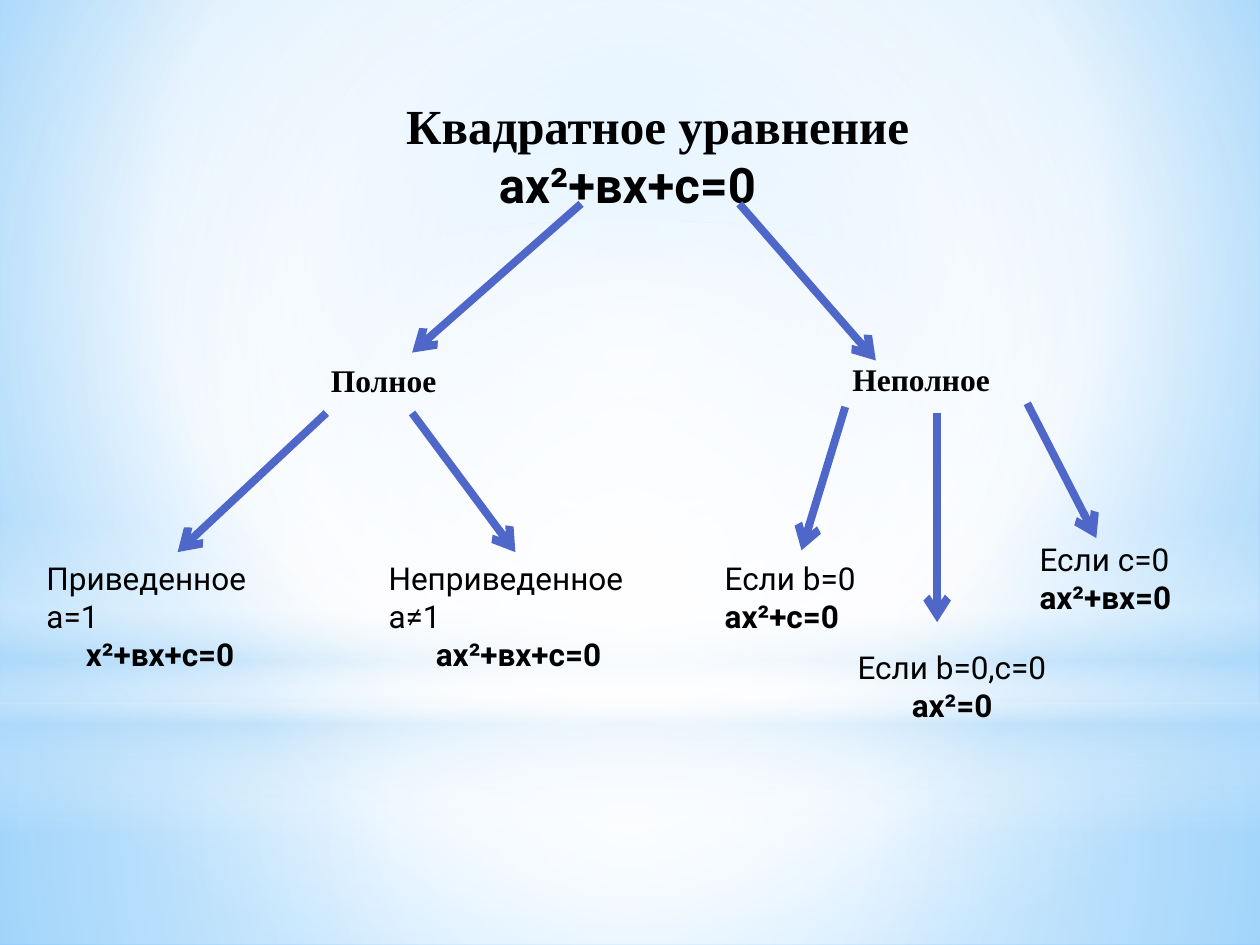
"""Build a slide that classifies quadratic equations as a tree."""
from dataclasses import dataclass

from lxml import etree
from pptx import Presentation
from pptx.dml.color import RGBColor
from pptx.enum.shapes import MSO_CONNECTOR, MSO_SHAPE
from pptx.enum.text import MSO_ANCHOR
from pptx.oxml.ns import qn
from pptx.util import Pt

RECTANGLE = MSO_SHAPE.RECTANGLE
OVAL = MSO_SHAPE.OVAL
STRAIGHT = MSO_CONNECTOR.STRAIGHT
TOP = MSO_ANCHOR.TOP


@dataclass(frozen=True)
class Theme:
    """Colours, fonts and sizes of the slide."""
    ink: str = "000000"
    arrow: str = "4E67C8"
    white: str = "FFFFFF"
    pale: str = "B4DCFA"
    sky: str = "9ED5FF"
    deep: str = "5BB9FF"
    serif: str = "Times New Roman"
    sans: str = "Roboto"
    title: int = 28
    body: int = 18
    arrow_width: float = 4.5


THEME = Theme()
WIDTH, HEIGHT = 720, 540
CENTRE = (50, 50, 50, 50)

BACKGROUND = [(0, THEME.sky, 100), (60, THEME.white, 100), (100, THEME.deep, 100)]
BACKGROUND_FOCUS = (20, 10, 20, 60)
LAYERS = [
    (RECTANGLE, 401.76, 138.24, CENTRE,
     [(0, THEME.white, 91), (37, THEME.white, 76), (100, THEME.pale, 79)]),
    (RECTANGLE, 0, 401.76, CENTRE,
     [(0, THEME.white, 89), (48, THEME.white, 62), (100, THEME.pale, 79)]),
    (RECTANGLE, 296.64, 180, None,
     [(0, THEME.white, 0), (29, THEME.white, 30), (45, THEME.pale, 40),
      (55, THEME.white, 26), (65, THEME.pale, 60), (100, THEME.white, 0)]),
    (OVAL, 126, 401.76, CENTRE, [(0, THEME.white, 100), (56, THEME.white, 0)]),
]

TITLE = (THEME.serif, THEME.title, True)
FORMULA_TITLE = (THEME.sans, THEME.title, True)
BRANCH = (THEME.serif, THEME.body, True)
CASE = (THEME.sans, THEME.body, False)
FORMULA = (THEME.sans, THEME.body, True)

NODES = [
    ((225, 51, 330, 74), [("Квадратное уравнение", TITLE, 0),
                          ("ах²+вх+с=0", FORMULA_TITLE, 53)]),
    ((182, 203, 84, 28), [("Полное", BRANCH, 0)]),
    ((480, 202, 104, 28), [("Неполное", BRANCH, 0)]),
    ((19.5, 316, 160, 72), [("Приведенное", CASE, 0), ("а=1", CASE, 0),
                            ("х²+вх+с=0", FORMULA, 22.5)]),
    ((215, 316, 180, 72), [("Неприведенное", CASE, 0), ("а≠1", CASE, 0),
                           ("ах²+вх+с=0", FORMULA, 27)]),
    ((407, 316, 90, 51), [("Если b=0", CASE, 0), ("ах²+с=0", FORMULA, 0)]),
    ((483, 367, 130, 51), [("Если b=0,с=0", CASE, 0), ("ах²=0", FORMULA, 31)]),
    ((587, 305, 100, 51), [("Если с=0", CASE, 0), ("ах²+вх=0", FORMULA, 0)]),
]

ARROWS = [
    ((332, 116.5), (235.5, 201.5)),
    ((422.5, 116.5), (500.5, 206)),
    ((186.5, 236), (101.5, 315.5)),
    ((235.5, 236), (294.5, 315.5)),
    ((587, 230.5), (626.5, 307.5)),
    ((535.5, 236), (535.5, 355.5)),
    ((483, 232.5), (458, 314.5)),
]


def paint_gradient(owner, fill, stops, focus):
    """Fill with a circular gradient around focus, or a vertical one."""
    fill.gradient()
    gradient = owner.find(".//" + qn("a:gradFill"))
    for child in list(gradient):
        gradient.remove(child)
    stop_list = etree.SubElement(gradient, qn("a:gsLst"))
    for position, color, opacity in stops:
        stop = etree.SubElement(stop_list, qn("a:gs"), pos=str(position * 1000))
        tint = etree.SubElement(stop, qn("a:srgbClr"), val=color)
        if opacity < 100:
            etree.SubElement(tint, qn("a:alpha"), val=str(opacity * 1000))
    if focus is None:
        etree.SubElement(gradient, qn("a:lin"), ang="5400000", scaled="0")
        return
    circle = etree.SubElement(gradient, qn("a:path"), path="circle")
    sides = {side: str(value * 1000) for side, value in zip("ltrb", focus)}
    etree.SubElement(circle, qn("a:fillToRect"), **sides)


def add_layer(slide, kind, top, height, focus, stops):
    """Add one full-width translucent background shape."""
    shape = slide.shapes.add_shape(kind, 0, Pt(top), Pt(WIDTH), Pt(height))
    shape.shadow.inherit = False
    shape.line.fill.background()
    paint_gradient(shape.element, shape.fill, stops, focus)


def add_node(slide, box, lines):
    """Add a text box with one indented paragraph per line."""
    frame = slide.shapes.add_textbox(*map(Pt, box)).text_frame
    frame.word_wrap = True
    frame.vertical_anchor = TOP
    for index, (text, (font, size, bold), indent) in enumerate(lines):
        paragraph = frame.add_paragraph() if index else frame.paragraphs[0]
        if indent:
            properties = paragraph._p.get_or_add_pPr()
            properties.set("marL", str(Pt(indent)))
            properties.set("indent", "0")
        run = paragraph.add_run()
        run.text = text
        run.font.name = font
        run.font.size = Pt(size)
        run.font.bold = bold
        run.font.color.rgb = RGBColor.from_string(THEME.ink)


def add_arrow(slide, start, end):
    """Add a straight line with an open arrowhead at its end."""
    connector = slide.shapes.add_connector(STRAIGHT, *map(Pt, start + end))
    connector.line.width = Pt(THEME.arrow_width)
    connector.line.color.rgb = RGBColor.from_string(THEME.arrow)
    etree.SubElement(connector.line._get_or_add_ln(), qn("a:tailEnd"), type="arrow")
    etree.SubElement(connector.element.spPr, qn("a:effectLst"))


def main():
    """Assemble and save the presentation."""
    presentation = Presentation()
    presentation.slide_width, presentation.slide_height = Pt(WIDTH), Pt(HEIGHT)
    slide = presentation.slides.add_slide(presentation.slide_layouts[6])
    paint_gradient(slide.element, slide.background.fill, BACKGROUND, BACKGROUND_FOCUS)
    for layer in LAYERS:
        add_layer(slide, *layer)
    for box, lines in NODES:
        add_node(slide, box, lines)
    for start, end in ARROWS:
        add_arrow(slide, start, end)
    presentation.save("out.pptx")


if __name__ == "__main__":
    main()
